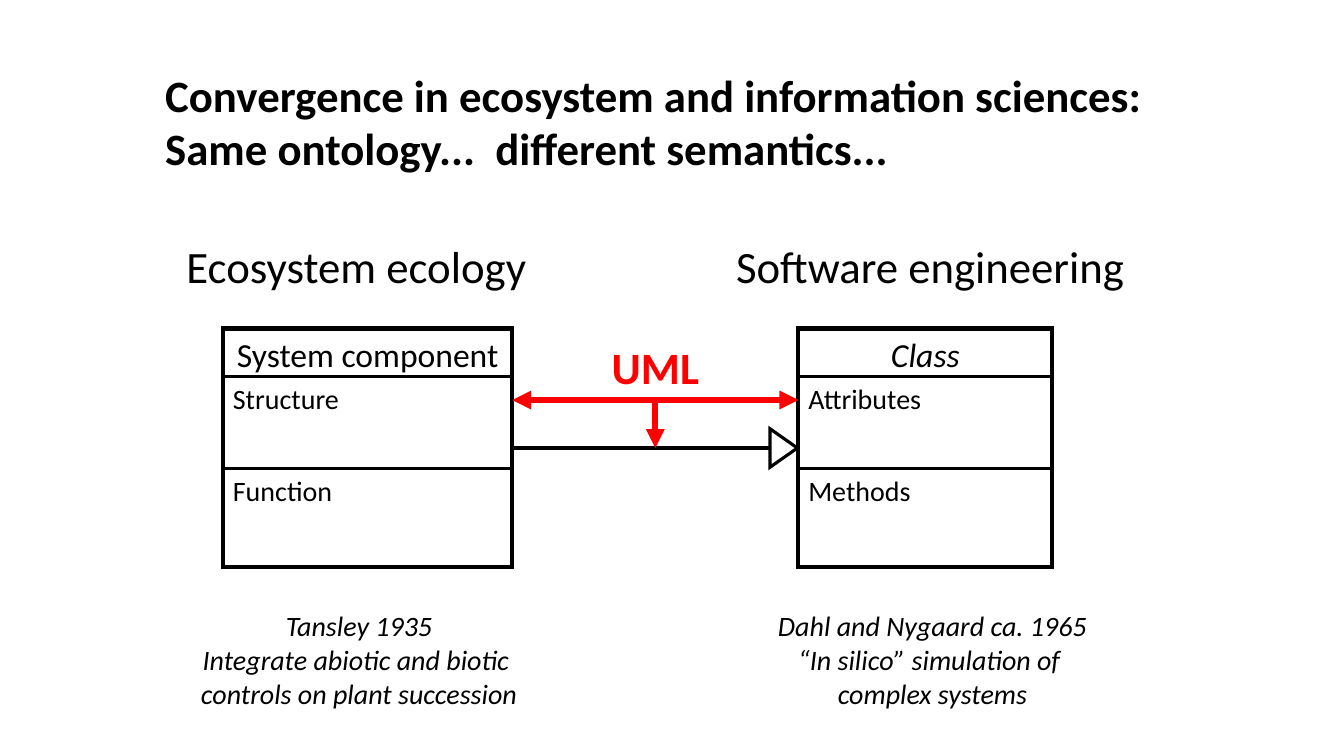
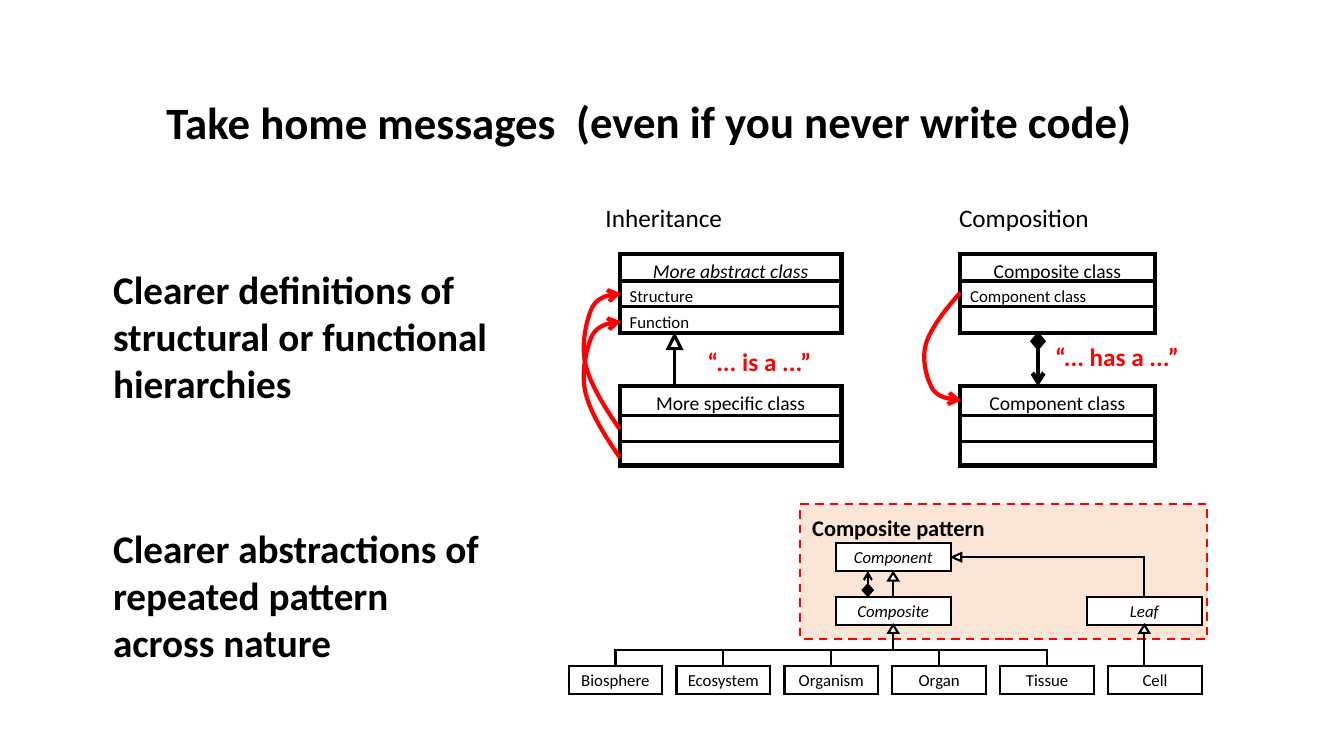
import pptx
import pptx.dml.color
import pptx.enum.dml
import pptx.enum.shapes
import pptx.enum.text
import pptx.oxml
import pptx.oxml.ns
import pptx.util

Cm = pptx.util.Cm
Pt = pptx.util.Pt
SHAPE = pptx.enum.shapes.MSO_SHAPE
CONNECTOR = pptx.enum.shapes.MSO_CONNECTOR
ALIGN = pptx.enum.text.PP_ALIGN
ANCHOR = pptx.enum.text.MSO_ANCHOR

# Shared style
FONT = "Calibri"
INK, ACCENT, PAPER, PANEL = "000000", "FF0000", "FFFFFF", "FBE5D6"
TITLE_SIZE = 32

# Control points of the looping arrow: x in cm, y as a share of its rise
LOOP = [(0, 0), (-0.38, 0.16), (-0.74, 0.33), (-0.86, 0.47), (-0.99, 0.62),
        (-0.84, 0.81), (-0.69, 0.9), (-0.53, 0.98), (-0.23, 0.99), (0.03, 1)]


def rgb(hex_color):
    return pptx.dml.color.RGBColor.from_string(hex_color)


def add_xml(parent, tag, **attributes):
    element = pptx.oxml.parse_xml(f"<a:{tag} {pptx.oxml.ns.nsdecls('a')}/>")
    for key, value in attributes.items():
        element.set(key, value)
    parent.append(element)


def write(frame, text, size, color=INK, bold=False, italic=False,
          align=ALIGN.LEFT, anchor=ANCHOR.TOP):
    frame.text = text
    frame.word_wrap = True
    frame.auto_size = pptx.enum.text.MSO_AUTO_SIZE.NONE
    frame.vertical_anchor = anchor
    for paragraph in frame.paragraphs:
        paragraph.alignment = align
        for run in paragraph.runs:
            run.font.name = FONT
            run.font.size = Pt(size)
            run.font.bold = bold
            run.font.italic = italic
            run.font.color.rgb = rgb(color)


def add_label(slide, left, top, width, height, text, size, **style):
    label = slide.shapes.add_textbox(Cm(left), Cm(top), Cm(width), Cm(height))
    write(label.text_frame, text, size, **style)


def set_line(item, color, weight, head=None, dash=None):
    item.line.color.rgb = rgb(color)
    item.line.width = Pt(weight)
    if dash:
        item.line.dash_style = dash
    ln = item.line._get_or_add_ln()
    add_xml(ln, "miter", lim="800000")
    if head:
        add_xml(ln, "tailEnd", type=head)


def add_box(slide, left, top, width, height, weight, fill=None, color=INK,
            dash=None, kind=SHAPE.RECTANGLE):
    box = slide.shapes.add_shape(kind, Cm(left), Cm(top), Cm(width), Cm(height))
    box.shadow.inherit = False
    if fill:
        box.fill.solid()
        box.fill.fore_color.rgb = rgb(fill)
    else:
        box.fill.background()
    set_line(box, color, weight, dash=dash)
    return box


def add_symbol(slide, kind, center_x, center_y, width, height, weight,
               fill=PAPER, rotation=0):
    symbol = add_box(slide, center_x - width / 2, center_y - height / 2,
                     width, height, weight, fill, kind=kind)
    symbol.rotation = rotation


def add_line(slide, x1, y1, x2, y2, weight, color=INK, head=None,
             kind=CONNECTOR.STRAIGHT):
    line = slide.shapes.add_connector(kind, Cm(x1), Cm(y1), Cm(x2), Cm(y2))
    set_line(line, color, weight, head)
    add_xml(line._element.spPr, "effectLst")
    return line


def add_drop(slide, x1, y1, x2, y2, weight):
    """Elbow that leaves downwards, runs sideways and arrives downwards."""
    mid_x, mid_y = (x1 + x2) / 2, (y1 + y2) / 2
    half_w, half_h = (y2 - y1) / 2, abs(x2 - x1) / 2
    drop = add_line(slide, mid_x - half_w, mid_y - half_h, mid_x + half_w,
                    mid_y + half_h, weight, kind=CONNECTOR.ELBOW)
    xfrm = drop._element.spPr.find(pptx.oxml.ns.qn("a:xfrm"))
    if x2 < x1:
        xfrm.set("rot", "5400000")
    else:
        xfrm.set("rot", "16200000")
        xfrm.set("flipH", "1")


def add_loop(slide, x, y, rise, steps=12):
    """Curved red arrow bulging to the left, from (x, y) over the given rise."""
    points = []
    for start in range(0, len(LOOP) - 1, 3):
        controls = LOOP[start:start + 4]
        for step in range(1, steps + 1):
            t = step / steps
            weights = ((1 - t) ** 3, 3 * t * (1 - t) ** 2, 3 * t * t * (1 - t), t ** 3)
            dx = sum(w * c[0] for w, c in zip(weights, controls))
            dy = sum(w * c[1] for w, c in zip(weights, controls))
            points.append((Cm(x + dx), Cm(y + dy * rise)))
    builder = slide.shapes.build_freeform(Cm(x), Cm(y))
    builder.add_line_segments(points, close=False)
    loop = builder.convert_to_shape()
    loop.shadow.inherit = False
    loop.fill.background()
    set_line(loop, ACCENT, 3, "arrow")


def add_class(slide, left, top, width, height, name, rows, dividers,
              name_size, row_size, italic=False):
    """UML class: a name and two compartments below the dividers."""
    box = add_box(slide, left, top, width, height, 3)
    write(box.text_frame, name, name_size, italic=italic, align=ALIGN.CENTER)
    for row, offset in zip(rows, dividers):
        y = top + offset
        add_line(slide, left, y, left + width, y, 2.25)
        if row:
            add_label(slide, left, y, width, row_size * 0.06, row, row_size)


def add_titled_slide(deck, left, top, width, height, title):
    slide = deck.slides.add_slide(deck.slide_layouts[5])
    holder = slide.shapes.title
    holder.left, holder.top = Cm(left), Cm(top)
    holder.width, holder.height = Cm(width), Cm(height)
    write(holder.text_frame, title, TITLE_SIZE, bold=True)
    return slide


# Slide 1 regions
def add_science(slide, left, top, width, heading, class_left, class_width,
                name, italic, rows, credit):
    add_label(slide, left, top, width, 1.63, heading, 32)
    add_class(slide, left + class_left, top + 2.38, class_width, 6, name, rows,
              (1.2, 3.53), 24, 20, italic)
    add_label(slide, left, top + 9.32, width, 2.82, credit, 20, italic=True,
              align=ALIGN.CENTER)


def add_bridge(slide, left, top, width):
    middle, right = left + width / 2, left + width
    red_y, black_y = top + 1.65, top + 2.86
    # Generalization arrow
    add_symbol(slide, SHAPE.ISOSCELES_TRIANGLE, right - 0.37, black_y,
               0.97, 0.69, 2.25, rotation=90)
    add_line(slide, left, black_y, right - 0.72, black_y, 2.25)
    # Shared language
    add_label(slide, middle - 1.35, top, 2.9, 1.63, "UML", 32, color=ACCENT, bold=True)
    for x, y in ((left, red_y), (middle, black_y), (right, red_y)):
        add_line(slide, middle, red_y, x, y, 4.5, ACCENT, "triangle")


def build_convergence(deck):
    slide = add_titled_slide(
        deck, 3.91, 1.57, 25.6, 3,
        "Convergence in ecosystem and information sciences:\n"
        "Same ontology...  different semantics...")
    add_science(slide, 4.45, 5.9, 9.2, "Ecosystem ecology", 1.17, 7.29,
                "System component", False, ("Structure", "Function"),
                "Tansley 1935\nIntegrate abiotic and biotic \n"
                "controls on plant succession")
    add_science(slide, 18.3, 5.9, 10.4, "Software engineering", 1.82, 6.4,
                "Class", True, ("Attributes", "Methods"),
                "Dahl and Nygaard ca. 1965\n“In silico” simulation of \n"
                "complex systems")
    add_bridge(slide, 12.91, 8.43, 7.21)


# Slide 2 regions
def add_relation(slide, left, top, width, heading, heading_shift, upper, italic,
                 upper_rows, lower, phrase, phrase_x, phrase_y):
    add_label(slide, left + heading_shift, top, 4.2, 1.02, heading, 18)
    add_class(slide, left, top + 1.42, width, 2, upper, upper_rows,
              (0.68, 1.33), 14, 12, italic)
    add_class(slide, left, top + 4.75, width, 2, lower, ("", ""),
              (0.75, 1.4), 14, 12)
    add_label(slide, left + phrase_x, top + phrase_y, 4, 1.02, phrase, 18,
              color=ACCENT, bold=True)


def add_inheritance(slide, left, top):
    add_relation(slide, left, top, 5.59, "Inheritance", -0.61,
                 "More abstract class", True, ("Structure", "Function"),
                 "More specific class", "“... is a ...”", 1.96, 3.63)
    x = left + 1.38
    add_symbol(slide, SHAPE.ISOSCELES_TRIANGLE, x, top + 3.64, 0.33, 0.33, 2.25)
    add_line(slide, x, top + 4.75, x, top + 3.8, 2.25)
    for start in (5.84, 6.55):
        add_loop(slide, left, top + start, -3.43)


def add_composition(slide, left, top):
    add_relation(slide, left, top, 4.9, "Composition", -0.28,
                 "Composite class", False, ("Component class", ""),
                 "Component class", "“... has a ...”", 2.14, 3.5)
    x = left + 1.96
    add_symbol(slide, SHAPE.DIAMOND, x, top + 3.62, 0.36, 0.43, 1, INK)
    add_line(slide, x, top + 3.63, x, top + 4.75, 3, head="arrow")
    add_loop(slide, left, top + 2.39, 2.72)


def add_pattern(slide, left, top):
    weight = 1.5
    triangle = SHAPE.ISOSCELES_TRIANGLE

    def add_node(x, y, width, text, fill=None, italic=False):
        node = add_box(slide, left + x, top + y, width, 0.7, weight, fill)
        frame = node.text_frame
        write(frame, text, 12, italic=italic, align=ALIGN.CENTER, anchor=ANCHOR.MIDDLE)
        frame.margin_left = frame.margin_right = 0

    add_box(slide, left + 5.84, top, 10.26, 3.4, weight, PANEL, ACCENT,
            pptx.enum.dml.MSO_LINE.DASH)
    add_label(slide, left + 5.89, top + 0.13, 5.2, 0.94, "Composite pattern", 16, bold=True)

    # Abstract roles
    for x, y, role in ((6.73, 0.99, "Component"), (6.73, 2.34, "Composite"),
                       (13.06, 2.34, "Leaf")):
        add_node(x, y, 2.9, role, PAPER, True)
    hub, leaf = left + 8.18, left + 14.51

    # Levels of nature, the last one being a leaf
    levels = ("Biosphere", "Ecosystem", "Organism", "Organ", "Tissue", "Cell")
    for index, level in enumerate(levels):
        x = index * 2.72
        add_node(x, 4.09, 2.36, level)
        if level != levels[-1]:
            add_drop(slide, hub, top + 3.25, left + x + 1.18, top + 4.09, weight)
    add_line(slide, leaf, top + 3.25, leaf, top + 4.09, weight)

    # Links between the roles
    add_line(slide, hub, top + 1.93, hub, top + 2.34, weight)
    for x, y in ((hub, 3.15), (hub, 1.83), (leaf, 3.15)):
        add_symbol(slide, triangle, x, top + y, 0.25, 0.2, weight)
    add_symbol(slide, SHAPE.DIAMOND, left + 7.54, top + 2.17, 0.25, 0.28, weight, INK)
    add_line(slide, left + 7.54, top + 2.13, left + 7.54, top + 1.69, weight, head="arrow")
    add_symbol(slide, triangle, left + 9.78, top + 1.34, 0.2, 0.23, weight, rotation=270)
    corner = add_line(slide, left + 9.9, top + 1.34, leaf, top + 2.34, weight,
                      kind=CONNECTOR.ELBOW)
    geometry = corner._element.spPr.find(pptx.oxml.ns.qn("a:prstGeom"))
    geometry.set("prst", "bentConnector2")


def build_messages(deck):
    slide = add_titled_slide(deck, 3.94, 2.26, 10.4, 1.63, "Take home messages")
    add_label(slide, 14.27, 2.24, 15, 1.63, "(even if you never write code)",
              TITLE_SIZE, bold=True)
    messages = ((6.55, "Clearer definitions of structural or functional hierarchies"),
                (13.08, "Clearer abstractions of repeated pattern across nature"))
    for top, message in messages:
        add_label(slide, 2.6, top, 10.16, 3.84, message, 28, bold=True)
    add_inheritance(slide, 15.62, 4.98)
    add_composition(slide, 24.2, 4.98)
    add_pattern(slide, 14.33, 12.7)


def main():
    deck = pptx.Presentation()
    deck.slide_width, deck.slide_height = Cm(33.87), Cm(19.05)
    build_convergence(deck)
    build_messages(deck)
    deck.save("out.pptx")


if __name__ == "__main__":
    main()
